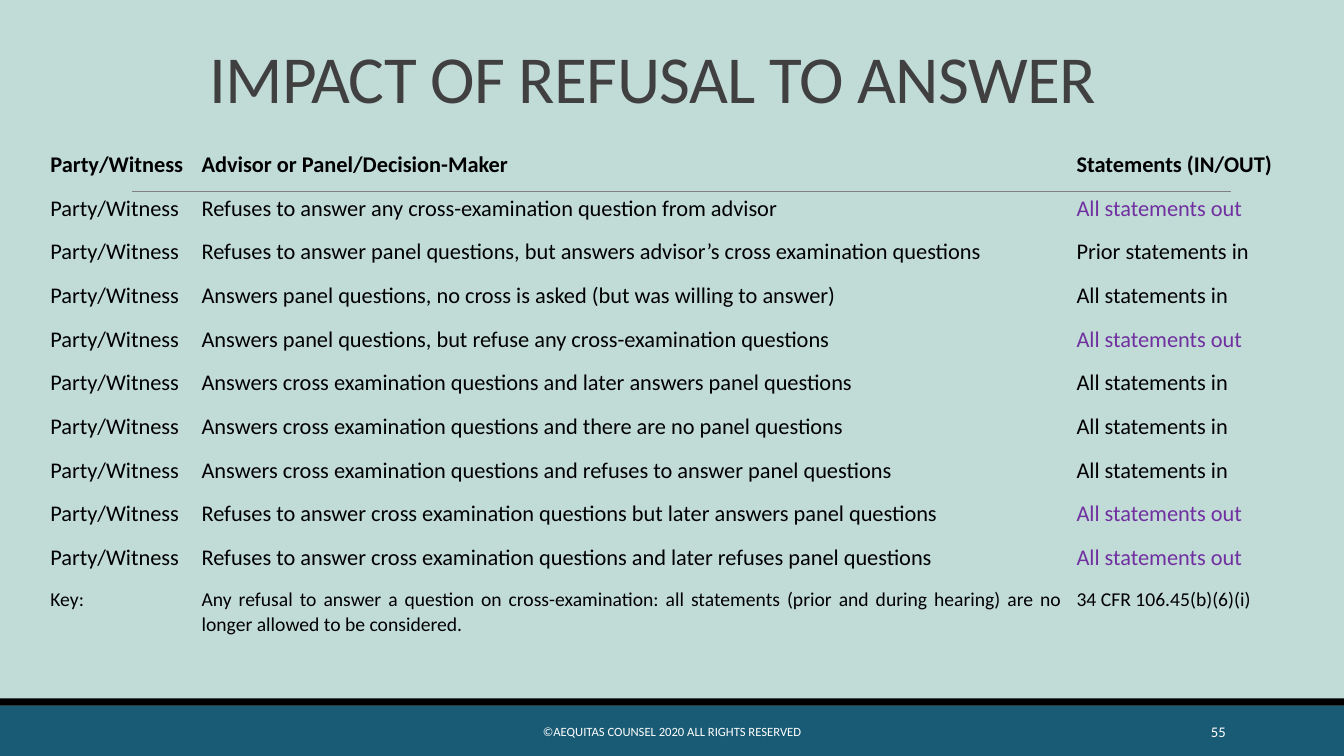
from dataclasses import dataclass

from lxml.etree import SubElement
from pptx import Presentation
from pptx.dml.color import RGBColor as RGB
from pptx.enum.shapes import MSO_CONNECTOR as CONNECTOR, MSO_SHAPE as SHAPE
from pptx.enum.text import MSO_ANCHOR as ANCHOR, MSO_AUTO_SIZE as FIT, PP_ALIGN as ALIGN
from pptx.oxml.ns import qn
from pptx.util import Cm, Pt


@dataclass(frozen=True)
class Theme:
    font: str = "Calibri"
    background: str = "C1DBD7"
    band: str = "195B74"
    text: str = "000000"
    title: str = "404040"
    rule: str = "808080"
    out: str = "7030A0"
    light: str = "FFFFFF"
    title_size: float = 48
    body_size: float = 16
    key_size: float = 14
    footer_size: float = 9
    number_size: float = 10.5


THEME = Theme()
NO_STYLE = "{2D5ABB26-0587-4C30-8999-92F81FD0307C}"
WIDTH, HEIGHT = 33.87, 19.05
COLUMNS = [3.81, 22.05, 5.82]
ROW_HEIGHT = 1.1
HEADER = ("Party/Witness", "Advisor or Panel/Decision-Maker", "Statements (IN/OUT)")
ALL_IN, ALL_OUT = "All statements in", "All statements out"
OUTCOMES = [
    ("Refuses to answer any cross-examination question from advisor", ALL_OUT),
    ("Refuses to answer panel questions, but answers advisor’s cross examination questions",
     "Prior statements in"),
    ("Answers panel questions, no cross is asked (but was willing to answer)", ALL_IN),
    ("Answers panel questions, but refuse any cross-examination questions", ALL_OUT),
    ("Answers cross examination questions and later answers panel questions", ALL_IN),
    ("Answers cross examination questions and there are no panel questions", ALL_IN),
    ("Answers cross examination questions and refuses to answer panel questions", ALL_IN),
    ("Refuses to answer cross examination questions but later answers panel questions", ALL_OUT),
    ("Refuses to answer cross examination questions and later refuses panel questions", ALL_OUT),
]
KEY = (
    "Key:",
    "Any refusal to answer a question on cross-examination: all statements "
    "(prior and during hearing) are no longer allowed to be considered.",
    "34 CFR 106.45(b)(6)(i)",
)


def add_run(p, text, size, color, bold=False):
    r = p.add_run()
    r.text = text
    r.font.name = THEME.font
    r.font.size = Pt(size)
    r.font.bold = bold
    r.font.color.rgb = RGB.from_string(color)
    return r


def add_title(slide, left, top, width, height):
    sp = slide.shapes.title
    sp.left, sp.top, sp.width, sp.height = Cm(left), Cm(top), Cm(width), Cm(height)
    tf = sp.text_frame
    tf.word_wrap = True
    tf.auto_size = FIT.NONE
    tf.vertical_anchor = ANCHOR.BOTTOM
    p = tf.paragraphs[0]
    p.alignment = ALIGN.CENTER
    p.line_spacing = 0.85
    r = add_run(p, "IMPACT OF REFUSAL TO ANSWER", THEME.title_size, THEME.title)
    r.font._element.set("spc", "-50")


def add_rule(slide, left, top, width):
    line = slide.shapes.add_connector(
        CONNECTOR.STRAIGHT, Cm(left), Cm(top), Cm(left + width), Cm(top))
    line.line.color.rgb = RGB.from_string(THEME.rule)
    line.line.width = Pt(0.5)
    SubElement(line._element.spPr, qn("a:effectLst"))


def fill_cell(cell, text, size, color, bold):
    cell.fill.background()
    cell.margin_left = cell.margin_right = Cm(0.18)
    cell.margin_top = cell.margin_bottom = 0
    p = cell.text_frame.paragraphs[0]
    p.alignment = ALIGN.JUSTIFY
    p.line_spacing = 1.07
    p.space_after = Pt(8)
    add_run(p, text, size, color, bold)


def add_outcome_table(slide, left, top):
    rows = [HEADER, *((HEADER[0], *outcome) for outcome in OUTCOMES), KEY]
    frame = slide.shapes.add_table(
        len(rows), len(COLUMNS), Cm(left), Cm(top),
        Cm(sum(COLUMNS)), Cm(ROW_HEIGHT * len(rows)))
    table = frame.table
    table.first_row = table.horz_banding = False
    table._tbl.tblPr.find(qn("a:tableStyleId")).text = NO_STYLE
    for column, width in zip(table.columns, COLUMNS):
        column.width = Cm(width)
    for i, row in enumerate(rows):
        table.rows[i].height = Cm(ROW_HEIGHT)
        size = THEME.key_size if row is KEY else THEME.body_size
        for j, text in enumerate(row):
            color = THEME.out if text == ALL_OUT else THEME.text
            fill_cell(table.cell(i, j), text, size, color, row is HEADER)


def add_band(slide, left, top, width, height, color):
    sp = slide.shapes.add_shape(SHAPE.RECTANGLE, Cm(left), Cm(top), Cm(width), Cm(height))
    sp.shadow.inherit = False
    sp.fill.solid()
    sp.fill.fore_color.rgb = RGB.from_string(color)
    sp.line.fill.background()


def add_label(slide, left, top, width, height, text, size, align):
    tf = slide.shapes.add_textbox(Cm(left), Cm(top), Cm(width), Cm(height)).text_frame
    tf.word_wrap = True
    tf.vertical_anchor = ANCHOR.MIDDLE
    p = tf.paragraphs[0]
    p.alignment = align
    add_run(p, text, size, THEME.light)


def add_footer(slide, left, top, width, height):
    edge = 0.18
    add_band(slide, left, top + edge, width, height - edge, THEME.band)
    add_band(slide, left, top, width, edge, THEME.text)
    label_top = top + 0.33
    add_label(slide, left + 10.24, label_top, 13.39, 1.02,
              "©AEQUITAS COUNSEL 2020 ALL RIGHTS RESERVED", THEME.footer_size, ALIGN.CENTER)
    add_label(slide, left + 27.51, label_top, 3.63, 1.02, "55", THEME.number_size, ALIGN.RIGHT)


def main():
    prs = Presentation()
    prs.slide_width, prs.slide_height = Cm(WIDTH), Cm(HEIGHT)
    s = prs.slides.add_slide(prs.slide_layouts[5])
    s.background.fill.solid()
    s.background.fill.fore_color.rgb = RGB.from_string(THEME.background)
    add_title(s, 1.47, 0.53, 29.95, 2.54)
    add_rule(s, 3.33, 4.82, 27.69)
    add_outcome_table(s, 1.09, 3.76)
    add_footer(s, 0, 17.6, WIDTH, HEIGHT - 17.6)
    prs.save("out.pptx")


if __name__ == "__main__":
    main()
